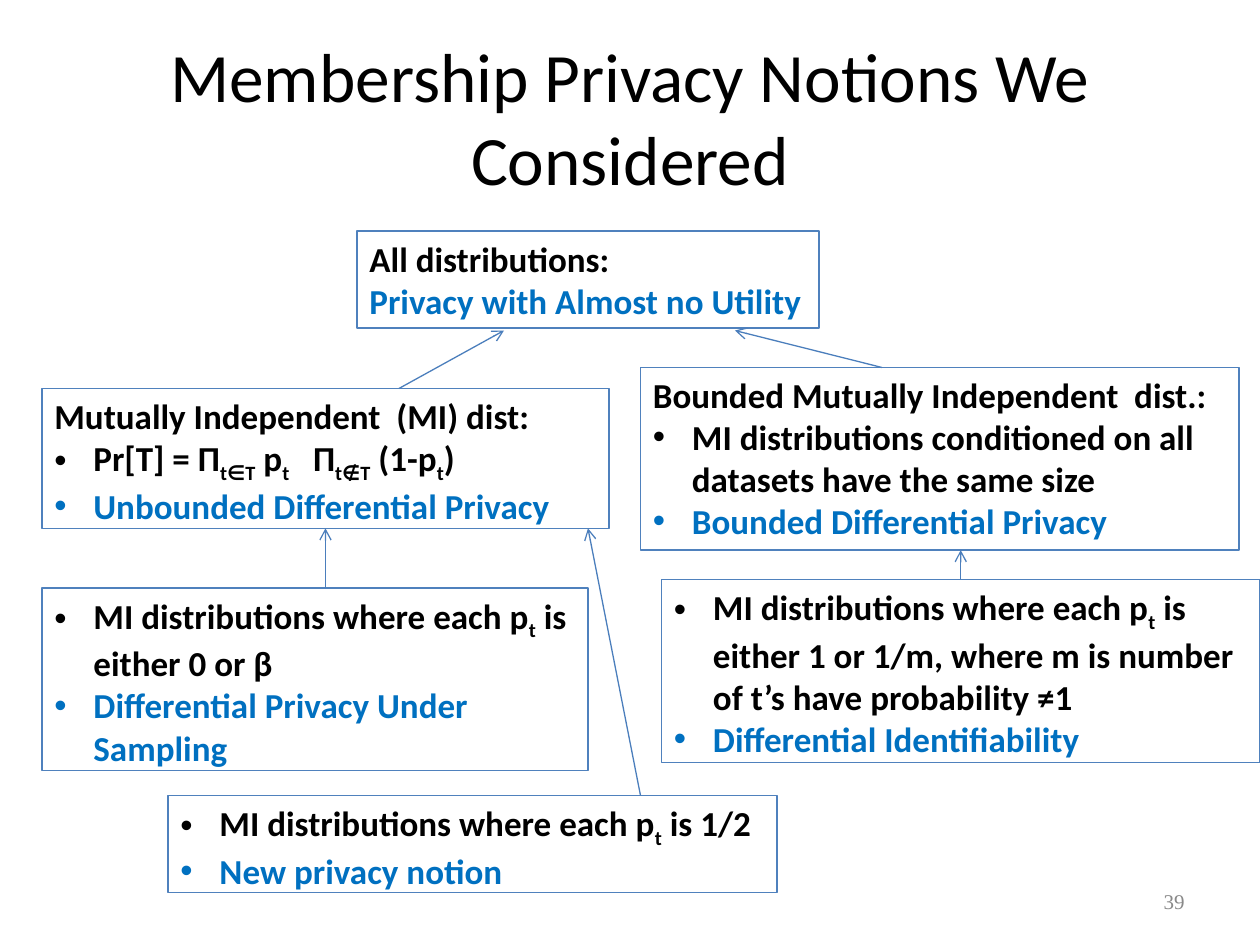
from lxml import etree
from pptx import Presentation
from pptx.dml.color import RGBColor
from pptx.enum.shapes import MSO_CONNECTOR, MSO_SHAPE
from pptx.enum.text import MSO_ANCHOR, MSO_AUTO_SIZE, PP_ALIGN
from pptx.oxml.ns import qn
from pptx.util import Inches, Pt

RECTANGLE = MSO_SHAPE.RECTANGLE
STRAIGHT = MSO_CONNECTOR.STRAIGHT
TOP, MIDDLE = MSO_ANCHOR.TOP, MSO_ANCHOR.MIDDLE
LEFT, CENTER, RIGHT = PP_ALIGN.LEFT, PP_ALIGN.CENTER, PP_ALIGN.RIGHT
GROW = MSO_AUTO_SIZE.SHAPE_TO_FIT_TEXT
NO_FIT = MSO_AUTO_SIZE.NONE

BLACK = RGBColor(0x00, 0x00, 0x00)
BLUE = RGBColor(0x00, 0x70, 0xC0)
GRAY = RGBColor(0x89, 0x89, 0x89)
BORDER = RGBColor(0x4F, 0x81, 0xBD)
ARROW = RGBColor(0x4B, 0x7E, 0xBC)

UNITS_PER_INCH = 12
LINE_HEIGHT = 0.34
BOX_PADDING = 0.09
BULLET_INDENT = Inches(0.31)
TOP_SIDE, BOTTOM_SIDE = 0, 2


def grid(units):
    return Inches(units / UNITS_PER_INCH)


def add_bullet(para):
    properties = para._p.get_or_add_pPr()
    properties.set("marL", str(BULLET_INDENT))
    properties.set("indent", str(-BULLET_INDENT))
    etree.SubElement(properties, qn("a:buFont")).set("typeface", "Arial")
    etree.SubElement(properties, qn("a:buChar")).set("char", "•")


def write_text(para, text, size=20, color=BLACK, font="Calibri", bold=False,
               align=LEFT, bullet=False):
    """Text between bars is set as subscript."""
    if bullet:
        add_bullet(para)
    para.alignment = align
    for index, part in enumerate(text.split("|")):
        if not part:
            continue
        span = para.add_run()
        span.text = part
        span.font.name = font
        span.font.size = Pt(size)
        span.font.bold = bold
        span.font.color.rgb = color
        if index % 2:
            span._r.get_or_add_rPr().set("baseline", "-25000")


def add_title(page, text):
    title = page.shapes.title
    title.left, title.top = Inches(0.5), Inches(0.3)
    title.width, title.height = Inches(9), Inches(1.25)
    frame = title.text_frame
    frame.auto_size = NO_FIT
    frame.vertical_anchor = MIDDLE
    write_text(frame.paragraphs[0], text, size=39.6, align=CENTER)


def add_page_number(page, text):
    box = page.shapes.add_textbox(grid(86), Inches(6.95), grid(28), Inches(0.4))
    frame = box.text_frame
    frame.word_wrap = True
    frame.vertical_anchor = MIDDLE
    write_text(frame.paragraphs[0], text, size=12, color=GRAY,
               font="Times New Roman", align=RIGHT)


def add_notion(page, column, row, columns, lines, notion, heading=None,
               condition=None):
    height = Inches(BOX_PADDING + LINE_HEIGHT * lines)
    box = page.shapes.add_shape(RECTANGLE, grid(column), grid(row),
                                grid(columns), height)
    box.shadow.inherit = False
    box.fill.background()
    box.line.color.rgb = BORDER
    box.line.width = Pt(0.75)
    frame = box.text_frame
    frame.word_wrap = True
    frame.auto_size = GROW
    frame.vertical_anchor = TOP
    entries = [(heading, BLACK, False), (condition, BLACK, True),
               (notion, BLUE, condition is not None)]
    shown = [entry for entry in entries if entry[0]]
    for index, (text, color, bullet) in enumerate(shown):
        para = frame.add_paragraph() if index else frame.paragraphs[0]
        write_text(para, text, color=color, bold=True, bullet=bullet)
    return box


def add_arrow(page, start, end, source=None, target=None):
    arrow = page.shapes.add_connector(STRAIGHT, *start, *end)
    if source is not None:
        arrow.begin_connect(source, TOP_SIDE)
    if target is not None:
        arrow.end_connect(target, BOTTOM_SIDE)
    arrow.line.color.rgb = ARROW
    arrow.line.width = Pt(0.75)
    etree.SubElement(arrow.line._get_or_add_ln(), qn("a:tailEnd")).set("type", "arrow")
    etree.SubElement(arrow._element.spPr, qn("a:effectLst"))


def main():
    deck = Presentation()
    deck.slide_width, deck.slide_height = Inches(10), Inches(7.5)
    page = deck.slides.add_slide(deck.slide_layouts[5])

    add_title(page, "Membership Privacy Notions We Considered")
    add_page_number(page, "39")

    universal = add_notion(page, 34, 22, 44, 2, "Privacy with Almost no Utility",
                           heading="All distributions:")
    independent = add_notion(page, 4, 37, 54, 3, "Unbounded Differential Privacy",
                             heading="Mutually Independent  (MI) dist:",
                             condition="Pr[T] = Π|t∈T| p|t|   Π|t∉T| (1-p|t|)")
    bounded = add_notion(page, 61, 35, 57, 4, "Bounded Differential Privacy",
                         heading="Bounded Mutually Independent  dist.:",
                         condition="MI distributions conditioned on all "
                                   "datasets have the same size")
    each = "MI distributions where each p|t| is "
    sampling = add_notion(page, 4, 56, 52, 4, "Differential Privacy Under Sampling",
                          condition=each + "either 0 or β")
    identifiable = add_notion(page, 63, 55.2, 57, 4, "Differential Identifiability",
                              condition=each + "either 1 or 1/m, where m is number "
                                               "of t’s have probability ≠1")
    half = add_notion(page, 16, 75.75, 58, 2, "New privacy notion",
                      condition=each + "1/2")

    universal_base = universal.top + universal.height + Inches(0.02)
    independent_base = independent.top + independent.height
    bounded_base = bounded.top + bounded.height
    add_arrow(page, (grid(38), independent.top), (grid(48), universal_base))
    add_arrow(page, (grid(84), bounded.top), (grid(70), universal_base))
    add_arrow(page, (grid(31), sampling.top), (grid(31), independent_base),
              target=independent)
    add_arrow(page, (grid(91.5), identifiable.top), (grid(91.5), bounded_base),
              source=identifiable)
    add_arrow(page, (grid(61), half.top), (grid(56), independent_base))

    deck.save("out.pptx")


if __name__ == "__main__":
    main()
